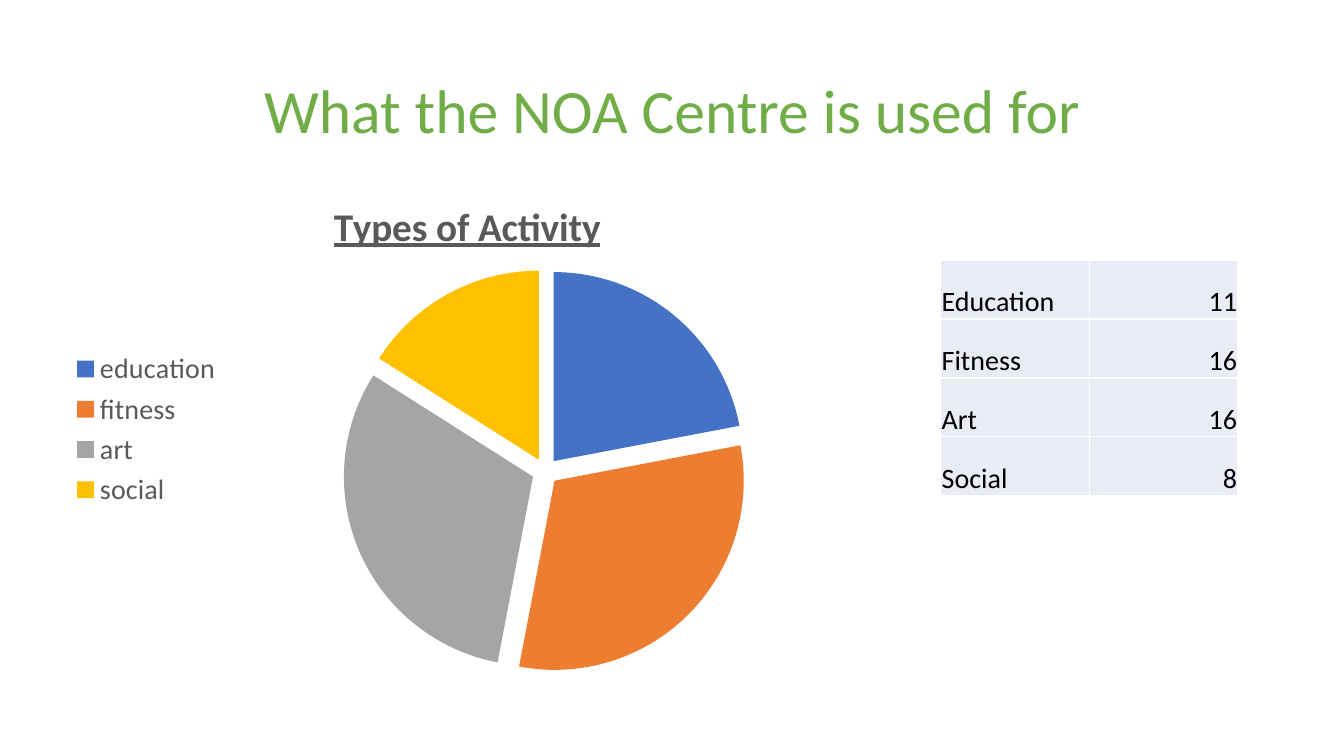
import pptx
import pptx.chart.data
import pptx.dml.color
import pptx.enum.chart
import pptx.enum.text
import pptx.oxml
import pptx.oxml.ns
import pptx.util
from pptx.util import Inches

RGBColor = pptx.dml.color.RGBColor
GREEN = RGBColor(0x70, 0xAD, 0x47)
GREY = RGBColor(0x59, 0x59, 0x59)
BLACK = RGBColor(0x00, 0x00, 0x00)
CELL_FILL = RGBColor(0xE9, 0xEB, 0xF5)
SLICE_COLORS = [
    RGBColor(0x44, 0x72, 0xC4),
    RGBColor(0xED, 0x7D, 0x31),
    RGBColor(0xA5, 0xA5, 0xA5),
    RGBColor(0xFF, 0xC0, 0x00),
]
ACTIVITY_SHARES = {"education": 22, "fitness": 31, "art": 31, "social": 16}
ACTIVITY_COUNTS = [("Education", 11), ("Fitness", 16), ("Art", 16), ("Social", 8)]


class SlideBuilder:
    """Holds the text style and the current slide."""

    font_name = "Calibri"

    def __init__(self, slide):
        self.slide = slide

    def style_font(self, font, size, color, bold=False):
        font.name = self.font_name
        font.size = pptx.util.Pt(size)
        font.bold = bold
        font.color.rgb = color

    def add_title(self, text, left, top, width, height):
        title = self.slide.shapes.title
        title.left, title.top = Inches(left), Inches(top)
        title.width, title.height = Inches(width), Inches(height)
        title.text_frame.text = text
        title.text_frame.vertical_anchor = pptx.enum.text.MSO_ANCHOR.MIDDLE
        paragraph = title.text_frame.paragraphs[0]
        paragraph.alignment = pptx.enum.text.PP_ALIGN.CENTER
        paragraph.line_spacing = 0.9
        self.style_font(paragraph.runs[0].font, 44, GREEN)

    def set_layout(self, element, **fractions):
        """Place a chart part by fractions of the chart's size."""
        namespace = pptx.oxml.ns.nsdecls("c")
        target = '<c:layoutTarget val="inner"/>' if "w" in fractions else ""
        modes = "".join(f'<c:{name}Mode val="edge"/>' for name in "xy")
        values = "".join(f'<c:{name} val="{value}"/>' for name, value in fractions.items())
        layout = pptx.oxml.parse_xml(
            f"<c:layout {namespace}><c:manualLayout>{target}{modes}{values}"
            "</c:manualLayout></c:layout>"
        )
        for old_layout in element.findall(pptx.oxml.ns.qn("c:layout")):
            element.remove(old_layout)
        text = element.find(pptx.oxml.ns.qn("c:tx"))
        if text is None:
            element.insert(0, layout)
        else:
            text.addnext(layout)

    def add_pie(self, heading, shares, left, top, width, height):
        data = pptx.chart.data.CategoryChartData()
        data.categories = list(shares)
        data.add_series("Series 1", list(shares.values()))
        chart = self.slide.shapes.add_chart(
            pptx.enum.chart.XL_CHART_TYPE.PIE,
            Inches(left), Inches(top), Inches(width), Inches(height), data,
        ).chart
        self.style_font(chart.font, 10, BLACK)

        # Heading
        chart.has_title = True
        chart.chart_title.include_in_layout = False
        chart.chart_title.text_frame.text = heading
        font = chart.chart_title.text_frame.paragraphs[0].runs[0].font
        self.style_font(font, 28, GREY, bold=True)
        font.underline = True

        # Legend
        chart.has_legend = True
        chart.legend.position = pptx.enum.chart.XL_LEGEND_POSITION.LEFT
        chart.legend.include_in_layout = False
        self.style_font(chart.legend.font, 20, GREY)

        # Exploded slices
        plot = chart.plots[0]
        plot.vary_by_categories = True
        series = plot.series[0]
        for index, color in enumerate(SLICE_COLORS):
            fill = series.points[index].format.fill
            fill.solid()
            fill.fore_color.rgb = color
        explosion = pptx.oxml.parse_xml(
            f'<c:explosion {pptx.oxml.ns.nsdecls("c")} val="7"/>'
        )
        first_point = series._element.find(pptx.oxml.ns.qn("c:dPt"))
        first_point.addprevious(explosion)

        # Positions inside the chart
        self.set_layout(chart.chart_title._element, x=0.33, y=0.05)
        plot_area = chart._chartSpace.chart.plotArea
        self.set_layout(plot_area, x=0.35, y=0.19, w=0.5, h=0.78)

    def add_border(self, cell):
        """Draw thin white lines on all four sides of a cell."""
        properties = cell._tc.get_or_add_tcPr()
        for index, side in enumerate(("lnL", "lnR", "lnT", "lnB")):
            properties.insert(index, pptx.oxml.parse_xml(
                f'<a:{side} {pptx.oxml.ns.nsdecls("a")} w="12700"><a:solidFill>'
                f'<a:srgbClr val="FFFFFF"/></a:solidFill></a:{side}>'
            ))

    def add_table(self, rows, left, top, width, height):
        table = self.slide.shapes.add_table(
            len(rows), len(rows[0]),
            Inches(left), Inches(top), Inches(width), Inches(height),
        ).table
        table.first_row = table.horz_banding = False
        alignments = (pptx.enum.text.PP_ALIGN.LEFT, pptx.enum.text.PP_ALIGN.RIGHT)
        for row_index, row in enumerate(rows):
            for column_index, value in enumerate(row):
                cell = table.cell(row_index, column_index)
                cell.text_frame.text = str(value)
                cell.margin_left = cell.margin_right = cell.margin_top = Inches(0.01)
                cell.margin_bottom = 0
                cell.vertical_anchor = pptx.enum.text.MSO_ANCHOR.BOTTOM
                cell.fill.solid()
                cell.fill.fore_color.rgb = CELL_FILL
                self.add_border(cell)
                paragraph = cell.text_frame.paragraphs[0]
                paragraph.alignment = alignments[column_index]
                self.style_font(paragraph.runs[0].font, 20, BLACK)


def main():
    presentation = pptx.Presentation()
    presentation.slide_width = Inches(13.33)
    presentation.slide_height = Inches(7.5)
    title_only = presentation.slide_layouts[5]
    builder = SlideBuilder(presentation.slides.add_slide(title_only))

    builder.add_title("What the NOA Centre is used for", 0.92, 0.4, 11.5, 1.45)
    builder.add_pie("Types of Activity", ACTIVITY_SHARES, 0.59, 1.65, 8.03, 5.22)
    builder.add_table(ACTIVITY_COUNTS, 9.33, 2.58, 2.95, 2.34)

    presentation.save("out.pptx")


if __name__ == "__main__":
    main()
